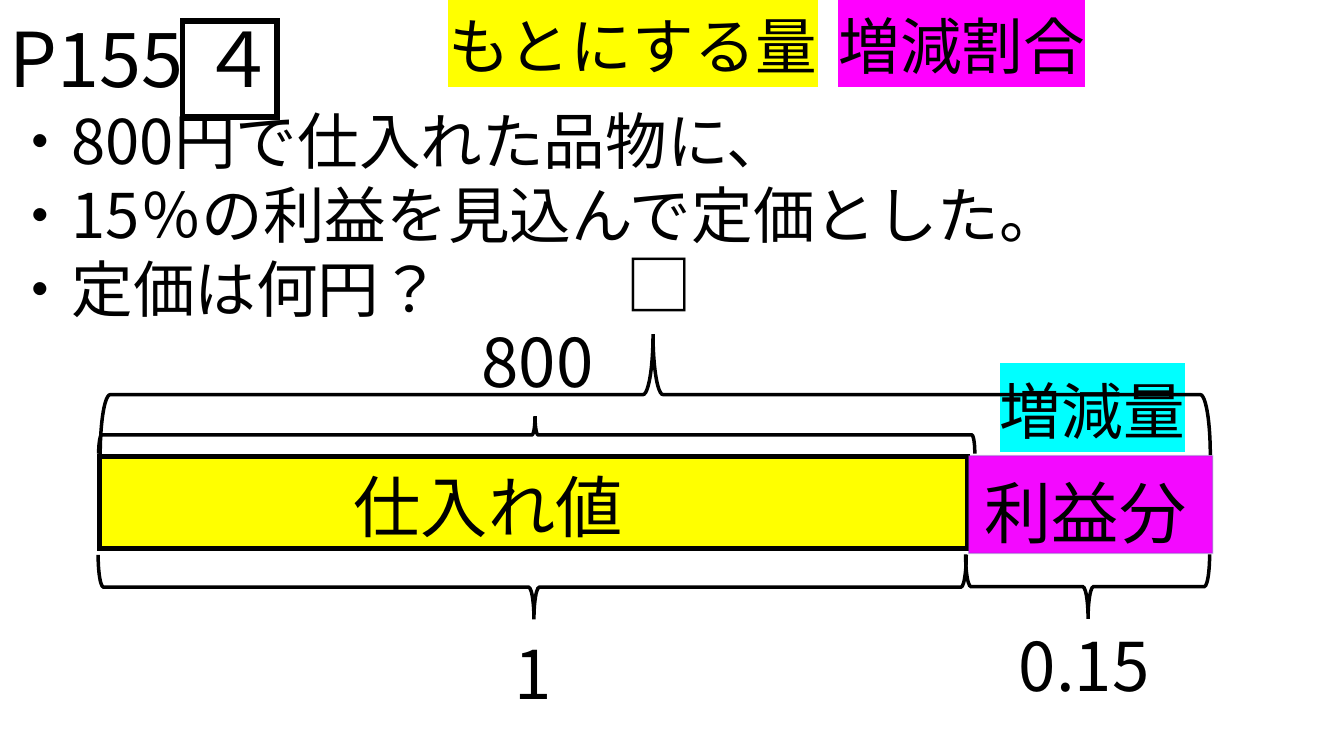
from lxml import etree
from pptx import Presentation
from pptx.dml.color import RGBColor
from pptx.enum.lang import MSO_LANGUAGE_ID
from pptx.enum.shapes import MSO_SHAPE
from pptx.enum.text import MSO_ANCHOR, MSO_AUTO_SIZE
from pptx.oxml.ns import qn
from pptx.util import Inches, Pt

RECT, BRACE = MSO_SHAPE.RECTANGLE, MSO_SHAPE.LEFT_BRACE
TOP = MSO_ANCHOR.TOP
FIT = MSO_AUTO_SIZE.SHAPE_TO_FIT_TEXT
JAPANESE = MSO_LANGUAGE_ID.JAPANESE
FONT = "Noto Sans CJK JP"
COLORS = {
    "ink": "000000", "paper": "FFFFFF", "base": "FFFF00", "rate": "FF00FF",
    "change": "00FFFF", "profit": "F309FF", "profit_edge": "325491",
}
SLIDE_W, SLIDE_H = Inches(13.33), Inches(7.5)
COLUMNS, ROWS = 80, 45
OPENS_DOWN, OPENS_UP = 270, 90


def rgb(name):
    return RGBColor.from_string(COLORS[name])


def cells(left, top, width, height):
    return (round(left * SLIDE_W / COLUMNS), round(top * SLIDE_H / ROWS),
            round(width * SLIDE_W / COLUMNS), round(height * SLIDE_H / ROWS))


def add_run(paragraph, text, size, highlight=None):
    run = paragraph.add_run()
    run.text = text
    run.font.size = Pt(size)
    run.font.language_id = JAPANESE
    run.font.color.rgb = rgb("ink")
    properties = run.font._element
    if highlight:
        marker = etree.SubElement(properties, qn("a:highlight"))
        etree.SubElement(marker, qn("a:srgbClr"), val=COLORS[highlight])
    run.font.name = FONT
    etree.SubElement(properties, qn("a:ea"), typeface=FONT)


def add_text(slide, area, lines, highlight=None, fill=None):
    box = slide.shapes.add_textbox(*cells(*area))
    if fill:
        box.fill.solid()
        box.fill.fore_color.rgb = rgb(fill)
    frame = box.text_frame
    frame.word_wrap = True
    frame.auto_size = FIT
    frame.vertical_anchor = TOP
    for index, (text, size) in enumerate(lines):
        paragraph = frame.add_paragraph() if index else frame.paragraphs[0]
        add_run(paragraph, text, size, highlight)


def add_outline(slide, kind, area, weight, fill=None, edge="ink"):
    shape = slide.shapes.add_shape(kind, *cells(*area))
    shape.shadow.inherit = False
    if fill:
        shape.fill.solid()
        shape.fill.fore_color.rgb = rgb(fill)
    else:
        shape.fill.background()
    shape.line.color.rgb = rgb(edge)
    shape.line.width = Pt(weight)
    etree.SubElement(shape.line._ln, qn("a:miter"), lim="800000")
    return shape


def fade_edge(shape, percent):
    color = shape.line._ln.find(qn("a:solidFill")).find(qn("a:srgbClr"))
    etree.SubElement(color, qn("a:alpha"), val=str(percent * 1000))


def add_brace(slide, left, top, span, depth, direction):
    upright = (left + (span - depth) / 2, top + (depth - span) / 2, depth, span)
    brace = add_outline(slide, BRACE, upright, 2.5)
    brace.rotation = direction
    brace.adjustments[0] = 0.083
    brace.adjustments[1] = 0.502


def main():
    deck = Presentation()
    deck.slide_width, deck.slide_height = SLIDE_W, SLIDE_H
    slide = deck.slides.add_slide(deck.slide_layouts[6])

    add_text(slide, (0, 0.42, 80, 19.38), [
        ("P155 ４", 54),
        ("・800円で仕入れた品物に、", 44),
        ("・15％の利益を見込んで定価とした。", 44),
        ("・定価は何円？", 44),
    ])
    add_text(slide, (26.1, 0.18, 23.34, 5.04), [("もとにする量", 44)], "base", "paper")
    add_text(slide, (49.32, 0.18, 16.26, 5.04), [("増減割合", 44)], "rate")
    add_text(slide, (58.92, 21.9, 13.14, 5.04), [("増減量", 44)], "change")

    add_outline(slide, RECT, (5.94, 27.18, 51.66, 5.46), 3.75, "base")
    add_brace(slide, 5.85, 33.03, 51.66, 3.84, OPENS_DOWN)
    profit_bar = add_outline(slide, RECT, (57.66, 27.12, 14.52, 5.82), 1,
                             "profit", "profit_edge")
    fade_edge(profit_bar, 26)
    add_brace(slide, 57.48, 33, 14.52, 3.84, OPENS_DOWN)

    bar_labels = [
        ("0.15", 60.06, 36.84, 9.66),
        ("1", 30.06, 37.32, 4.74),
        ("仕入れ値", 20.46, 27.42, 26.34),
        ("800", 28.08, 18.78, 8.04),
        ("利益分", 58.02, 27.78, 14.52),
        ("□", 36.66, 14.16, 8.04),
    ]
    for text, left, top, width in bar_labels:
        add_text(slide, (left, top, width, 5.46), [(text, 48)])

    add_brace(slide, 5.88, 24.78, 52.14, 2.22, OPENS_UP)
    add_outline(slide, RECT, (10.86, 1.26, 5.64, 5.7), 4)
    add_brace(slide, 5.97, 19.89, 66.06, 7.2, OPENS_UP)
    deck.save("out.pptx")


if __name__ == "__main__":
    main()
